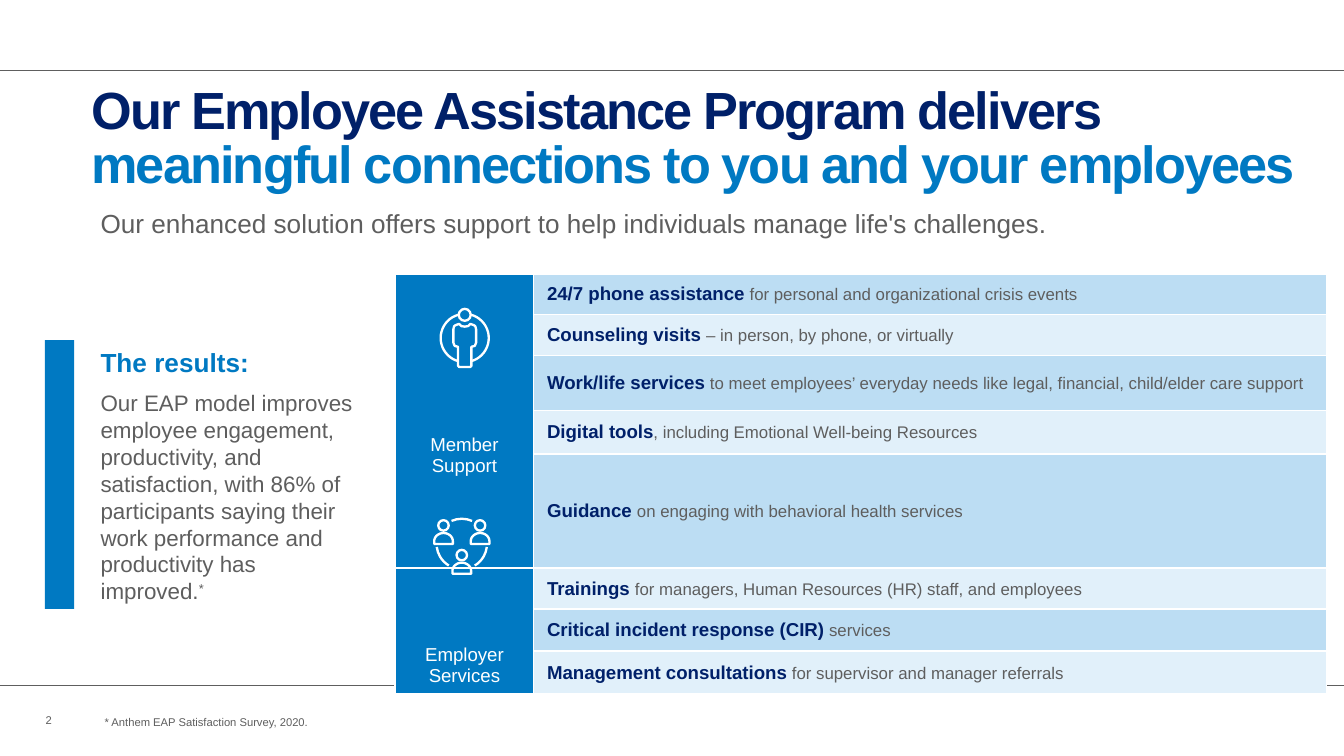
"""Build the slide on the Employee Assistance Program."""
from math import cos, pi, sin
from lxml.etree import SubElement
from pptx import Presentation
from pptx.dml.color import RGBColor
from pptx.enum.shapes import MSO_CONNECTOR as Link, MSO_SHAPE as Form
from pptx.enum.text import MSO_ANCHOR as Anchor, PP_ALIGN as Align
from pptx.oxml.ns import qn
from pptx.util import Pt

paint = RGBColor.from_string
NAVY, BLUE, GRAY, WHITE = "002069", "0079C2", "5E5E5E", "FFFFFF"
PALE, LIGHT = "BCDDF3", "E1F0FA"


def write(para, *runs):
    for text, size, color, bold in runs:
        run = para.add_run()
        run.text = text
        font = run.font
        font.name, font.size, font.bold = "Arial", Pt(size), bold
        font.color.rgb = paint(color)


def trace(group, dots):
    (x, y), *rest = [(100 * a, 100 * b) for a, b in dots]
    form = group.shapes.build_freeform(x, y, scale=Pt(1) / 100)
    form.add_line_segments(rest, close=True)
    form.convert_to_shape()


deck = Presentation()
deck.slide_width, deck.slide_height = Pt(720), Pt(405)
slide = deck.slides.add_slide(deck.slide_layouts[6])
shapes = slide.shapes

for y in (37.4, 367.2):
    rule = shapes.add_connector(Link.STRAIGHT, Pt(0), Pt(y), Pt(720), Pt(y))
    rule.line.color.rgb = paint(GRAY)
    rule.line.width = Pt(0.25)
    SubElement(rule._element.spPr, qn("a:effectLst"))

boxes = []
for left, top, width, height, anchor, inset in (
    (49, 46.8, 670, 67, Anchor.TOP, False),
    (46.8, 108.7, 643, 31.7, Anchor.TOP, True),
    (46.8, 182.2, 156.2, 147, Anchor.TOP, True),
    (24.5, 375.1, 21.6, 21.6, Anchor.MIDDLE, False),
    (49, 379.4, 360, 14.4, Anchor.MIDDLE, True),
):
    box = shapes.add_textbox(Pt(left), Pt(top), Pt(width), Pt(height))
    frame = box.text_frame
    frame.word_wrap = True
    frame.vertical_anchor = anchor
    if not inset:
        frame.margin_left = frame.margin_right = 0
        frame.margin_top = frame.margin_bottom = 0
    boxes.append(frame)
title, lead, facts, page, note = boxes

head = title.paragraphs[0]
head.line_spacing = 0.85
write(head, ("Our Employee Assistance Program delivers", 28, NAVY, True))
head.add_line_break()
write(head, ("meaningful connections to you and your employees", 28, BLUE, True))
for run in head.runs:
    run.font._element.set("spc", "-100")

lead.paragraphs[0].line_spacing = 0.95
write(lead.paragraphs[0], (
    "Our enhanced solution offers support to help individuals manage "
    "life's challenges.", 14, GRAY, False))

facts.paragraphs[0].space_after = Pt(6)
write(facts.paragraphs[0], ("The results:", 14, BLUE, True))
body = facts.add_paragraph()
write(body, (
    "Our EAP model improves employee engagement, productivity, and "
    "satisfaction, with 86% of participants saying their work performance "
    "and productivity has improved.", 12, GRAY, False), ("*", 12, GRAY, False))
body.runs[1].font._element.set("baseline", "30000")

write(page.paragraphs[0], ("2", 6, GRAY, False))
write(note.paragraphs[0],
      ("* Anthem EAP Satisfaction Survey, 2020.", 6, GRAY, False))

bar = shapes.add_shape(Form.RECTANGLE, Pt(24), Pt(182.2), Pt(15.8), Pt(144))
bar.shadow.inherit = False
bar.fill.solid()
bar.fill.fore_color.rgb = paint(BLUE)
bar.line.fill.background()

rows = (
    (21.5, PALE, "24/7 phone assistance ",
     "for personal and organizational crisis events"),
    (22, LIGHT, "Counseling visits ", "– in person, by phone, or virtually"),
    (29.5, PALE, "Work/life services ",
     "to meet employees’ everyday needs like legal, financial, "
     "child/elder care support"),
    (23.5, LIGHT, "Digital tools", ", including Emotional Well-being Resources"),
    (60, PALE, "Guidance ", "on engaging with behavioral health services"),
    (22, LIGHT, "Trainings ",
     "for managers, Human Resources (HR) staff, and employees"),
    (22.5, PALE, "Critical incident response (CIR) ", "services"),
    (23, LIGHT, "Management consultations ",
     "for supervisor and manager referrals"),
)
table = shapes.add_table(len(rows), 2, Pt(211.7), Pt(146.9), Pt(499),
                         Pt(sum(row[0] for row in rows))).table
table.first_row = table.horz_banding = False
table.columns[0].width, table.columns[1].width = Pt(74.2), Pt(424.8)
for i, (height, tint, name, detail) in enumerate(rows):
    table.rows[i].height = Pt(height)
    for cell, fill in zip(table.rows[i].cells, (BLUE, tint)):
        props = cell._tc.get_or_add_tcPr()
        for side in ("a:lnL", "a:lnR", "a:lnT", "a:lnB"):
            edge = SubElement(props, qn(side), w=str(Pt(1)))
            solid = SubElement(edge, qn("a:solidFill"))
            SubElement(solid, qn("a:srgbClr"), val=WHITE)
        cell.fill.solid()
        cell.fill.fore_color.rgb = paint(fill)
        cell.vertical_anchor = Anchor.MIDDLE
    write(cell.text_frame.paragraphs[0],
          (name, 10, NAVY, True), (detail, 9, GRAY, False))

for first, last, words in ((0, 4, ("Member", "Support")),
                           (5, 7, ("Employer", "Services"))):
    cell = table.cell(first, 0)
    cell.merge(table.cell(last, 0))
    cell.margin_top, cell.margin_bottom = Pt(37), 0
    para = cell.text_frame.paragraphs[0]
    para.alignment = Align.CENTER
    write(para, (words[0], 10, WHITE, False))
    para.add_line_break()
    write(para, (words[1], 10, WHITE, False))

member, team = shapes.add_group_shape(), shapes.add_group_shape()
half = ((0, 175), (1.8, 174.7), (3, 173.5), (4.9, 174.2), (5.7, 174.8),
        (6.1, 176.4), (6.1, 183.6), (5.4, 185.3), (3.6, 185.8),
        (3.6, 196), (3, 196.6))
trace(member, [(249 + x, y) for x, y in half]
      + [(249 - x, y) for x, y in half[:0:-1]])

heads = [(member, 249, 168.7, 3.2)]
for x, y in ((237.6, 281.5), (257.2, 281.5), (247.4, 297.4)):
    heads.append((team, x, y, 2.8))
    dome = [(x - 5 * cos(k * pi / 16), y + 8.5 - 4.4 * sin(k * pi / 16))
            for k in range(17)]
    trace(team, dome + [(x + 5, y + 10), (x - 5, y + 10)])
for group, x, y, r in heads:
    group.shapes.add_shape(Form.OVAL, Pt(x - r), Pt(y - r), Pt(2 * r), Pt(2 * r))

for group, x, y, r, start, end in (
    (member, 249, 181.1, 12.9, 105, 255),
    (member, 249, 181.1, 12.9, 285, 75),
    (team, 247.4, 291.4, 13.5, 121, 173),
    (team, 247.4, 291.4, 13.5, 7, 59),
    (team, 247.4, 291.4, 13.5, 246, 294),
):
    arc = group.shapes.add_shape(Form.ARC, Pt(x - r), Pt(y - r),
                                 Pt(2 * r), Pt(2 * r))
    arc.adjustments[0], arc.adjustments[1] = start * 0.6, end * 0.6

for group in (member, team):
    for part in group.shapes:
        part.shadow.inherit = False
        part.fill.background()
        part.line.color.rgb = paint(WHITE)
        part.line.width = Pt(1.25)

deck.save("out.pptx")
